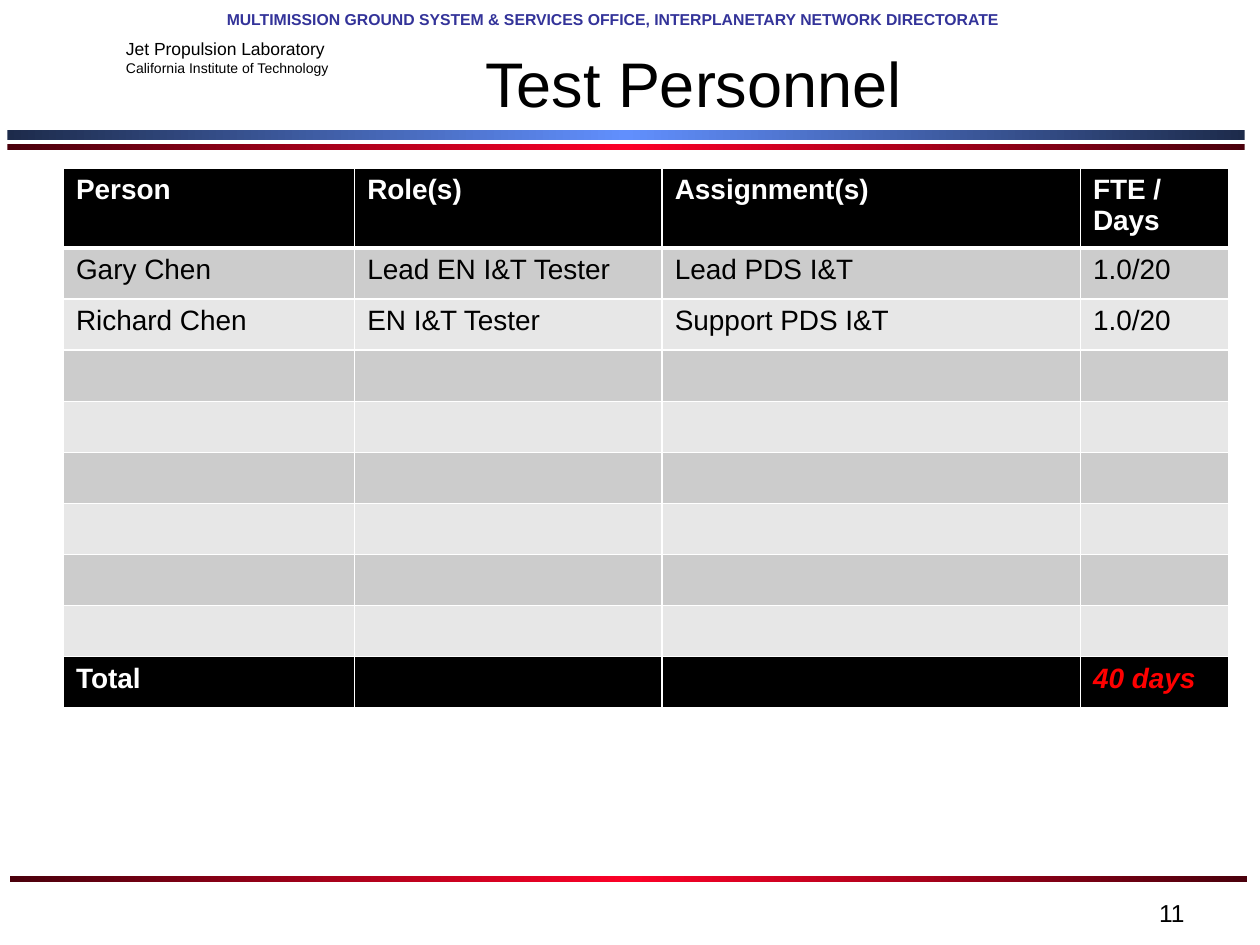
"""Build the Test Personnel slide."""
from copy import deepcopy
from pptx import Presentation
from pptx.dml.color import RGBColor as Rgb
from pptx.enum.shapes import MSO_SHAPE as Kind
from pptx.enum.text import MSO_ANCHOR as Anchor, PP_ALIGN as Align
from pptx.oxml import parse_xml
from pptx.oxml.ns import nsdecls, qn
from pptx.util import Cm, Pt

HEAD = "MULTIMISSION GROUND SYSTEM & SERVICES OFFICE, INTERPLANETARY NETWORK DIRECTORATE"
BLUE = ("1D2B4B", "618FFD", "1D2B4B")
RED = ("4B000C", "FC0128", "4B000C")

BARS = [
    ((0.15, 2.62, 24.94, 0.2), BLUE),
    ((0.15, 2.9, 24.94, 0.13), RED),
    ((0.2, 17.65, 24.94, 0.13), RED),
]
TEXTS = [
    ((4.09, 0.2, 16.51, 0.43), Align.CENTER, 0, True,
     [(HEAD, {"size": 9, "bold": True, "color": "333399"})]),
    ((2.29, 0.64, 4.7, 1.02), Align.LEFT, 1, False,
     [("Jet Propulsion Laboratory", {"size": 10}),
      ("California Institute of Technology", {"size": 8})]),
    ((6.78, 0.76, 14.4, 1.78), Align.CENTER, 1, True,
     [("Test Personnel", {"size": 36})]),
    ((18.21, 17.98, 5.92, 0.69), Align.RIGHT, 1, True,
     [("11", {"size": 14})]),
]
TOP = ["Person", "Role(s)", "Assignment(s)", "FTE / Days"]
STAFF = [
    ["Gary Chen", "Lead EN I&T Tester", "Lead PDS I&T", "1.0/20"],
    ["Richard Chen", "EN I&T Tester", "Support PDS I&T", "1.0/20"],
]
TOTAL = ["Total", "", "", "40 days"]
ROWS = [TOP, *STAFF, *[[""] * 4] * 6, TOTAL]
COLS = [5.87, 6.2, 8.43, 3]
HIGH = [1.48] + [1.03] * 9
BODY = {"size": 16}
BOLD = {"size": 16, "bold": True, "color": "FFFFFF"}
SUM = {**BOLD, "italic": True, "color": "FF0000"}


def paint(code):
    return Rgb.from_string(code)


def style(font, form):
    form = {"name": "Arial", "color": "000000", **form}
    font.color.rgb = paint(form.pop("color"))
    form["size"] = Pt(form["size"])
    for key, val in form.items():
        setattr(font, key, val)


def write(para, text, form):
    run = para.add_run()
    run.text = text
    style(run.font, form)


def add_bar(slide, box, hues):
    bar = slide.shapes.add_shape(Kind.RECTANGLE, *map(Cm, box))
    bar.shadow.inherit = False
    bar.line.fill.background()
    bar.fill.gradient()
    bar.fill.gradient_angle = 0
    stops = next(bar.element.iter(qn("a:gsLst")))
    stops.append(deepcopy(stops[0]))
    for num, (stop, hue) in enumerate(zip(bar.fill.gradient_stops, hues)):
        stop.position = num / 2
        stop.color.rgb = paint(hue)


def add_text(slide, box, align, pad, wrap, lines):
    frame = slide.shapes.add_textbox(*map(Cm, box)).text_frame
    form = {
        "word_wrap": wrap, "vertical_anchor": Anchor.TOP,
        "margin_left": Cm(0.25 * pad), "margin_right": Cm(0.25 * pad),
        "margin_top": Cm(0.13 * pad), "margin_bottom": Cm(0.13 * pad),
    }
    for key, val in form.items():
        setattr(frame, key, val)
    for num, (text, font) in enumerate(lines):
        para = frame.add_paragraph() if num else frame.paragraphs[0]
        para.alignment = align
        write(para, text, font)


def edge(cell, row):
    wide = {"L": 1, "R": 1, "T": 3 if row == 1 else 1, "B": 1 if row else 3}
    props = cell._tc.get_or_add_tcPr()
    for num, (side, size) in enumerate(wide.items()):
        props.insert(num, parse_xml(
            f'<a:ln{side} {nsdecls("a")} w="{Pt(size)}"><a:solidFill>'
            f'<a:srgbClr val="FFFFFF"/></a:solidFill></a:ln{side}>'))


def add_grid(slide):
    box = (1.28, 3.39, sum(COLS), sum(HIGH))
    grid = slide.shapes.add_table(len(ROWS), len(COLS), *map(Cm, box)).table
    for col, wide in zip(grid.columns, COLS):
        col.width = Cm(wide)
    last = len(ROWS) - 1
    for row, words in enumerate(ROWS):
        grid.rows[row].height = Cm(HIGH[row])
        dark = row in (0, last)
        band = "000000" if dark else "CCCCCC" if row % 2 else "E7E7E7"
        for col, text in enumerate(words):
            cell = grid.cell(row, col)
            cell.fill.solid()
            cell.fill.fore_color.rgb = paint(band)
            edge(cell, row)
            if text:
                form = SUM if (row, col) == (last, 3) else BOLD if dark else BODY
                write(cell.text_frame.paragraphs[0], text, form)


def main():
    deck = Presentation()
    deck.slide_width, deck.slide_height = Cm(25.4), Cm(19.05)
    slide = deck.slides.add_slide(deck.slide_layouts[6])
    for bar in BARS:
        add_bar(slide, *bar)
    for item in TEXTS:
        add_text(slide, *item)
    add_grid(slide)
    deck.save("out.pptx")


if __name__ == "__main__":
    main()
